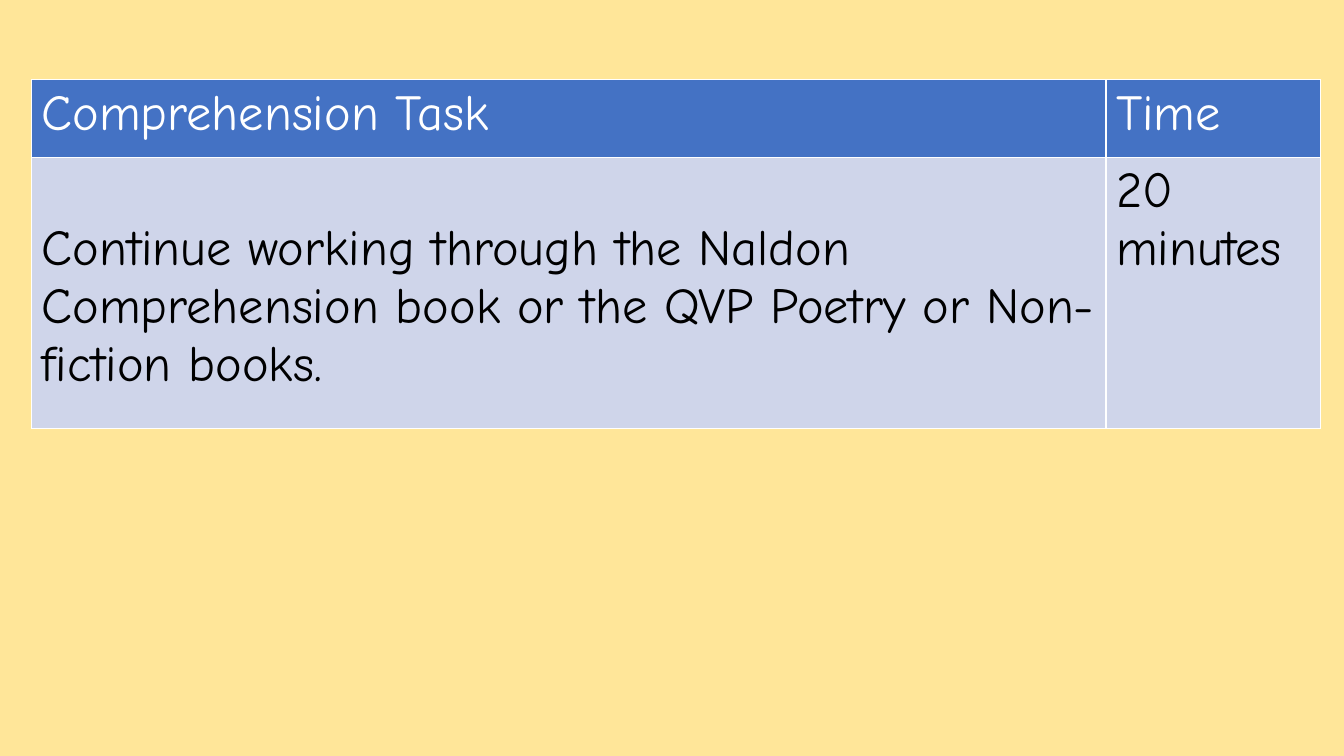
"""Build a slide with a comprehension task and its time in a two-column table."""
from dataclasses import dataclass

from lxml.etree import SubElement
from pptx import Presentation
from pptx.dml.color import RGBColor as Rgb
from pptx.dml.fill import FillFormat
from pptx.oxml.ns import qn
from pptx.table import _Cell as Cell
from pptx.util import Pt

BORDER_SIDES = ("a:lnL", "a:lnR", "a:lnT", "a:lnB")
COLUMN_WIDTHS = (767.5, 153.5)
ROW_HEIGHTS = (55.5, 193.5)
TABLE_LEFT, TABLE_TOP = 22.5, 57
LINE_HEIGHT = 41.4


@dataclass(frozen=True)
class Entry:
    text: str
    fill: str
    color: str
    lines_above: int = 0


def header(text: str) -> Entry:
    return Entry(text, "4472C4", "FFFFFF")


def detail(text: str, lines_above: int = 0) -> Entry:
    return Entry(text, "CFD5EA", "000000", lines_above)


ENTRIES = (
    (header("Comprehension Task"), header("Time")),
    (
        detail(
            "Continue working through the Naldon Comprehension book "
            "or the QVP Poetry or Non-fiction books.",
            lines_above=1,
        ),
        detail("20 minutes"),
    ),
)


def paint(fill: FillFormat, color: str) -> None:
    fill.solid()
    fill.fore_color.rgb = Rgb.from_string(color)


def add_borders(cell: Cell, color: str, width: float) -> None:
    properties = cell._tc.get_or_add_tcPr()
    for side in BORDER_SIDES:
        border = SubElement(properties, qn(side), w=str(Pt(width)))
        solid = SubElement(border, qn("a:solidFill"))
        SubElement(solid, qn("a:srgbClr"), val=color)


def write_entry(cell: Cell, entry: Entry) -> None:
    add_borders(cell, "FFFFFF", 1)
    paint(cell.fill, entry.fill)
    cell.margin_top = Pt(3.6 + entry.lines_above * LINE_HEIGHT)
    cell.text = entry.text
    font = cell.text_frame.paragraphs[0].runs[0].font
    for attribute, value in {"name": "Comic Neue", "size": Pt(36), "bold": False}.items():
        setattr(font, attribute, value)
    paint(font.fill, entry.color)


def main() -> None:
    deck = Presentation()
    deck.slide_width, deck.slide_height = Pt(960), Pt(540)
    slide = deck.slides.add_slide(deck.slide_layouts[6])
    paint(slide.background.fill, "FFE699")

    tasks = slide.shapes.add_table(
        len(ROW_HEIGHTS), len(COLUMN_WIDTHS), Pt(TABLE_LEFT), Pt(TABLE_TOP),
        Pt(sum(COLUMN_WIDTHS)), Pt(sum(ROW_HEIGHTS)),
    ).table
    for column, width in zip(tasks.columns, COLUMN_WIDTHS):
        column.width = Pt(width)
    for row, height, entries in zip(tasks.rows, ROW_HEIGHTS, ENTRIES):
        row.height = Pt(height)
        for cell, entry in zip(row.cells, entries):
            write_entry(cell, entry)

    deck.save("out.pptx")


if __name__ == "__main__":
    main()
